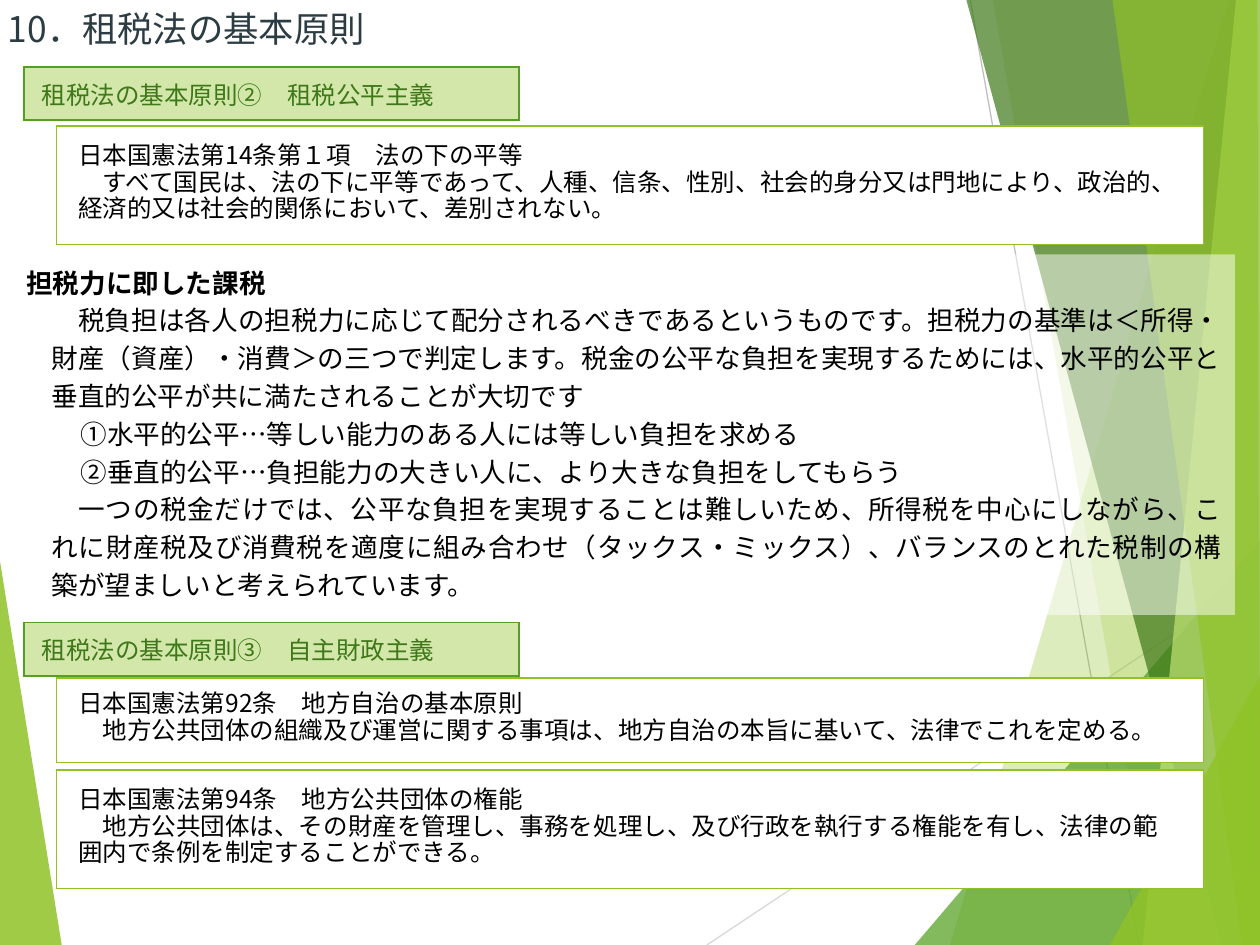
from lxml import etree
from pptx import Presentation
from pptx.dml import color
from pptx.enum import shapes, text
from pptx.oxml import ns
from pptx.util import Inches, Pt

FONT = "Noto Sans CJK JP"
COLORS = {
    "lime": "90C226",
    "green": "54A021",
    "forest": "3F7819",
    "pale": "C0E474",
    "label": "D2E7A9",
    "slate": "2C3C43",
    "black": "000000",
    "white": "FFFFFF",
    "silver": "D9D9D9",
    "gray": "BFBFBF",
}
LEFT_FACET = ([(-0.01, 4.39), (0.49, 7.5), (-0.01, 7.5)], "lime", 85)
RIGHT_FACETS = [
    ([(9.75, 0), (7.54, 7.5), (10.01, 7.5), (10.01, 0)], "lime", 30),
    ([(7.88, 0), (9.19, 7.5), (10.01, 7.5), (10.01, 0)], "lime", 20),
    ([(7.26, 7.5), (10, 4.29), (10.01, 7.5)], "green", 72),
    ([(7.67, 0), (9.7, 7.5), (10.01, 7.5), (10.01, 0)], "forest", 70),
    ([(9.81, 0), (9.07, 7.5), (10.01, 7.5), (10, 0)], "pale", 70),
    ([(8.83, 0), (9.86, 7.5), (10, 7.5), (9.98, 0)], "lime", 65),
    ([(8.81, 7.5), (10.01, 5.35), (10.01, 7.5)], "lime", 80),
]
LABELS = [
    (0.53, "租税法の基本原則②　租税公平主義"),
    (4.94, "租税法の基本原則③　自主財政主義"),
]
ARTICLES = [
    (1, 0.94, "日本国憲法第14条第１項　法の下の平等",
     "　すべて国民は、法の下に平等であって、人種、信条、性別、社会的身分又は門地により、政治的、経済的又は社会的関係において、差別されない。"),
    (5.38, 0.67, "日本国憲法第92条　地方自治の基本原則",
     "　地方公共団体の組織及び運営に関する事項は、地方自治の本旨に基いて、法律でこれを定める。"),
    (6.11, 0.94, "日本国憲法第94条　地方公共団体の権能",
     "　地方公共団体は、その財産を管理し、事務を処理し、及び行政を執行する権能を有し、法律の範囲内で条例を制定することができる。"),
]
EXPLANATION = [
    ("担税力に即した課税", 0, True),
    ("　税負担は各人の担税力に応じて配分されるべきであるというものです。担税力の基準は＜所得・財産（資産）・消費＞の三つで判定します。税金の公平な負担を実現するためには、水平的公平と垂直的公平が共に満たされることが大切です", 0.2, False),
    ("①水平的公平…等しい能力のある人には等しい負担を求める", 0.43, False),
    ("②垂直的公平…負担能力の大きい人に、より大きな負担をしてもらう", 0.43, False),
    ("　一つの税金だけでは、公平な負担を実現することは難しいため、所得税を中心にしながら、これに財産税及び消費税を適度に組み合わせ（タックス・ミックス）、バランスのとれた税制の構築が望ましいと考えられています。", 0.2, False),
]


def rgb(name):
    return color.RGBColor.from_string(COLORS[name])


def set_fill(fill, name, opacity=100):
    fill.solid()
    fill.fore_color.rgb = rgb(name)
    if opacity < 100:
        srgb = fill._xPr.find(".//" + ns.qn("a:srgbClr"))
        etree.SubElement(srgb, ns.qn("a:alpha"), val=str(opacity * 1000))


def style_para(para, size, name, bold=False, spacing=None):
    font = para.font
    font.name, font.size, font.bold = FONT, Pt(size), bold
    font.color.rgb = rgb(name)
    latin = font._element.find(ns.qn("a:latin"))
    latin.addnext(latin.makeelement(ns.qn("a:ea"), typeface=FONT))
    para.space_before = para.space_after = Pt(0)
    if spacing:
        para.line_spacing = Pt(spacing)


def fill_lines(frame, lines, size, name, spacing=None):
    frame.text = "\n".join(lines)
    for para in frame.paragraphs:
        style_para(para, size, name, spacing=spacing)


def add_facet(page, points, name, opacity):
    corners = [(Inches(x), Inches(y)) for x, y in points]
    builder = page.shapes.build_freeform(*corners[0])
    builder.add_line_segments(corners[1:])
    facet = builder.convert_to_shape()
    facet.shadow.inherit = False
    facet.line.fill.background()
    set_fill(facet.fill, name, opacity)


def add_ray(page, start, end, name):
    ends = [Inches(value) for value in start + end]
    ray = page.shapes.add_connector(shapes.MSO_CONNECTOR.STRAIGHT, *ends)
    ray.line.color.rgb = rgb(name)
    ray.line.width = Pt(0.75)
    etree.SubElement(ray._element.spPr, ns.qn("a:effectLst"))


def add_border(cell, name):
    properties = cell._tc.get_or_add_tcPr()
    for index, side in enumerate(("lnL", "lnR", "lnT", "lnB")):
        line = properties.makeelement(ns.qn("a:" + side), w=str(Pt(1)))
        solid = etree.SubElement(line, ns.qn("a:solidFill"))
        etree.SubElement(solid, ns.qn("a:srgbClr"), val=COLORS[name])
        properties.insert(index, line)


def add_framed_cell(page, bounds, border, margins):
    frame = page.shapes.add_table(1, 1, *[Inches(value) for value in bounds])
    cell = frame.table.cell(0, 0)
    cell.margin_left = cell.margin_right = Inches(margins[0])
    cell.margin_top = cell.margin_bottom = Inches(margins[1])
    add_border(cell, border)
    return cell


def add_label(page, top, caption):
    cell = add_framed_cell(page, (0.19, top, 3.93, 0.4), "green", (0.14, 0.07))
    set_fill(cell.fill, "label")
    fill_lines(cell.text_frame, [caption], 14, "forest")


def add_article(page, top, height, heading, provision):
    cell = add_framed_cell(page, (0.45, top, 9.1, height), "lime", (0.17, 0.06))
    cell.vertical_anchor = text.MSO_ANCHOR.MIDDLE
    set_fill(cell.fill, "white", 75)
    fill_lines(cell.text_frame, [heading, provision], 14, "black", 15)


def add_explanation(page):
    box = page.shapes.add_shape(shapes.MSO_SHAPE.RECTANGLE, Inches(0.11), Inches(2.02),
                                Inches(9.69), Inches(2.86))
    box.shadow.inherit = False
    box.line.fill.background()
    set_fill(box.fill, "white", 50)
    frame = box.text_frame
    frame.word_wrap = True
    frame.vertical_anchor = text.MSO_ANCHOR.TOP
    frame.text = "\n".join(line for line, _, _ in EXPLANATION)
    for para, (_, indent, bold) in zip(frame.paragraphs, EXPLANATION):
        style_para(para, 15.2, "black", bold, 21.6)
        justified = indent == 0.2
        para.alignment = text.PP_ALIGN.JUSTIFY if justified else text.PP_ALIGN.LEFT
        para._p.get_or_add_pPr().set("marL", str(Inches(indent)))


def set_title(page, caption):
    title = page.shapes.title
    title.left, title.top = Inches(0), Inches(0)
    title.width, title.height = Inches(4), Inches(0.45)
    frame = title.text_frame
    frame.margin_left = frame.margin_right = frame.margin_top = frame.margin_bottom = 0
    frame.vertical_anchor = text.MSO_ANCHOR.MIDDLE
    fill_lines(frame, [caption], 20.2, "slate")
    frame.paragraphs[0].alignment = text.PP_ALIGN.LEFT


def main():
    deck = Presentation()
    deck.slide_width, deck.slide_height = Inches(10), Inches(7.5)
    page = deck.slides.add_slide(deck.slide_layouts[5])
    add_facet(page, *LEFT_FACET)
    add_ray(page, (5.61, 7.5), (10.01, 4.57), "silver")
    add_ray(page, (7.7, 0), (9.04, 7.5), "gray")
    for facet in RIGHT_FACETS:
        add_facet(page, *facet)
    for label in LABELS:
        add_label(page, *label)
    for article in ARTICLES:
        add_article(page, *article)
    add_explanation(page)
    set_title(page, " 10．租税法の基本原則")
    deck.save("out.pptx")


if __name__ == "__main__":
    main()
